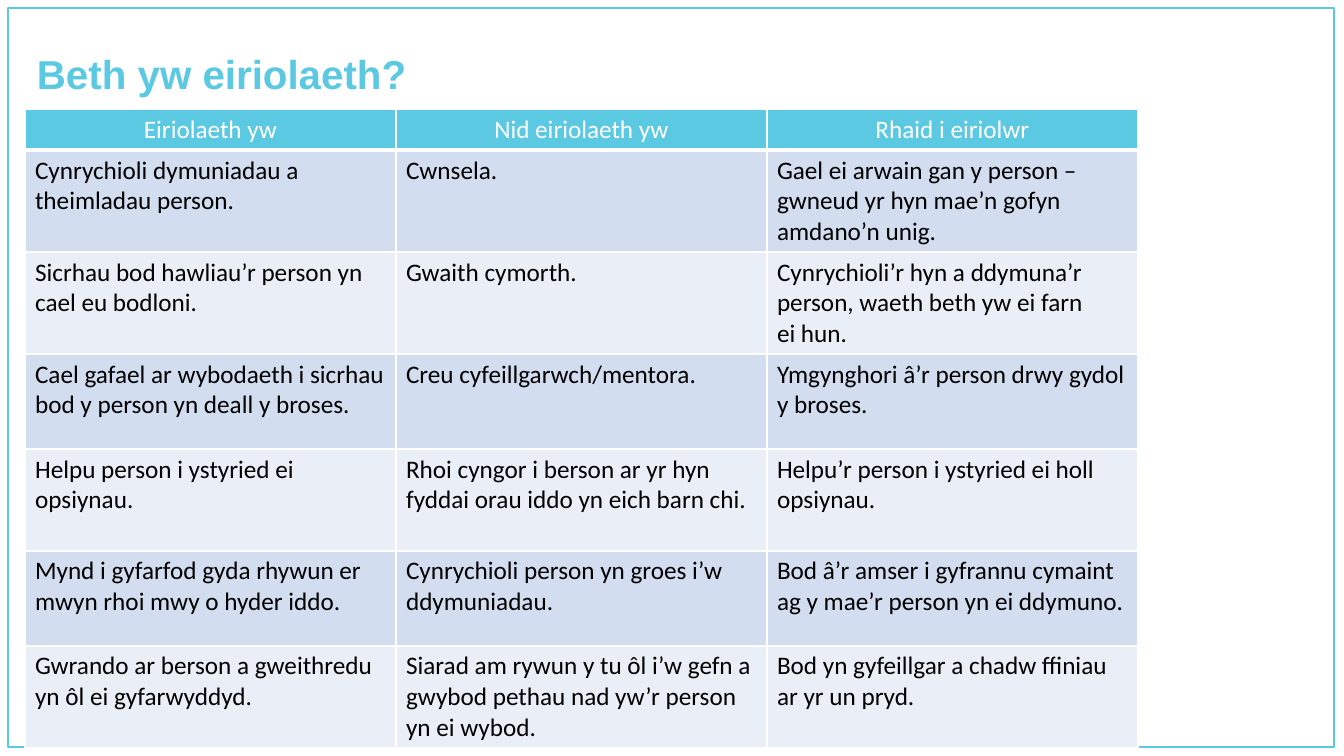
from dataclasses import dataclass

from lxml.etree import SubElement
from pptx import Presentation
from pptx.dml.color import RGBColor
from pptx.enum.shapes import MSO_SHAPE
from pptx.enum.text import MSO_ANCHOR, PP_ALIGN
from pptx.oxml.ns import qn
from pptx.util import Emu, Pt

TITLE = "Beth yw eiriolaeth?"
ROWS = [
    ("Eiriolaeth yw", "Nid eiriolaeth yw", "Rhaid i eiriolwr"),
    ("Cynrychioli dymuniadau a theimladau person.",
     "Cwnsela.",
     "Gael ei arwain gan y person – gwneud yr hyn mae’n gofyn amdano’n unig."),
    ("Sicrhau bod hawliau’r person yn cael eu bodloni.",
     "Gwaith cymorth.",
     "Cynrychioli’r hyn a ddymuna’r person, waeth beth yw ei farn \vei hun."),
    ("Cael gafael ar wybodaeth i sicrhau bod y person yn deall y broses.",
     "Creu cyfeillgarwch/mentora.",
     "Ymgynghori â’r person drwy gydol y broses."),
    ("Helpu person i ystyried ei opsiynau.",
     "Rhoi cyngor i berson ar yr hyn fyddai orau iddo yn eich barn chi.",
     "Helpu’r person i ystyried ei holl opsiynau."),
    ("Mynd i gyfarfod gyda rhywun er mwyn rhoi mwy o hyder iddo.",
     "Cynrychioli person yn groes i’w ddymuniadau.",
     "Bod â’r amser i gyfrannu cymaint ag y mae’r person yn ei ddymuno."),
    ("Gwrando ar berson a gweithredu yn ôl ei gyfarwyddyd.",
     "Siarad am rywun y tu ôl i’w gefn a gwybod pethau nad yw’r person yn ei wybod.",
     "Bod yn gyfeillgar a chadw ffiniau ar yr un pryd."),
]
SLIDE = (1344, 756)
FRAME = (8, 8, 1326, 739)
TITLE_BOX = (27, 49, 1056, 54)
TABLE_AT = (25, 109)
COLUMN = 371
ROW_HEIGHTS = (41, 102, 102, 95, 102, 95, 102)


@dataclass(frozen=True)
class Theme:
    accent: str = "5CC9E3"
    white: str = "FFFFFF"
    text: str = "000000"
    bands: tuple = ("D2DEEF", "EAEFF7")
    title_font: str = "Arial"
    body_font: str = "Calibri"
    title_size: float = 28.8
    body_size: int = 18
    rule: int = 1
    header_rule: int = 3


THEME = Theme()


def px(n):
    return Emu(round(n * 12192000 / SLIDE[0]))


def rgb(value):
    return RGBColor.from_string(value)


def style_font(font, name, size, color, bold):
    font.name, font.size, font.bold = name, Pt(size), bold
    font.color.rgb = rgb(color)


def add_frame(slide):
    sp = slide.shapes.add_shape(MSO_SHAPE.RECTANGLE, *map(px, FRAME))
    sp.shadow.inherit = False
    sp.fill.background()
    sp.line.color.rgb = rgb(THEME.accent)
    sp.line.width = Pt(THEME.rule)


def add_title(slide):
    tf = slide.shapes.add_textbox(*map(px, TITLE_BOX)).text_frame
    tf.word_wrap = True
    tf.vertical_anchor = MSO_ANCHOR.BOTTOM
    tf.text = TITLE
    p = tf.paragraphs[0]
    p.line_spacing = 0.9
    style_font(p.runs[0].font, THEME.title_font, THEME.title_size, THEME.accent, True)


def add_borders(cell, bottom):
    tc_pr = cell._tc.get_or_add_tcPr()
    widths = {"lnL": THEME.rule, "lnR": THEME.rule, "lnT": THEME.rule, "lnB": bottom}
    for side, width in widths.items():
        ln = SubElement(tc_pr, qn(f"a:{side}"), w=str(Pt(width)))
        fill = SubElement(ln, qn("a:solidFill"))
        SubElement(fill, qn("a:srgbClr"), val=THEME.white)


def fill_cell(cell, text, row):
    header = row == 0
    add_borders(cell, THEME.header_rule if header else THEME.rule)
    cell.fill.solid()
    cell.fill.fore_color.rgb = rgb(THEME.accent if header else THEME.bands[(row - 1) % 2])
    cell.text_frame.text = text
    p = cell.text_frame.paragraphs[0]
    p.alignment = PP_ALIGN.CENTER if header else PP_ALIGN.LEFT
    for r in p.runs:
        style_font(r.font, THEME.body_font, THEME.body_size,
                   THEME.white if header else THEME.text, False)


def add_advocacy_table(slide):
    columns = len(ROWS[0])
    table = slide.shapes.add_table(
        len(ROWS), columns, *map(px, TABLE_AT),
        px(COLUMN * columns), px(sum(ROW_HEIGHTS))).table
    table.first_row = table.horz_banding = False
    for column in table.columns:
        column.width = px(COLUMN)
    for i, (texts, height) in enumerate(zip(ROWS, ROW_HEIGHTS)):
        table.rows[i].height = px(height)
        for j, text in enumerate(texts):
            fill_cell(table.cell(i, j), text, i)


def main():
    prs = Presentation()
    prs.slide_width, prs.slide_height = map(px, SLIDE)
    s = prs.slides.add_slide(prs.slide_layouts[6])
    add_frame(s)
    add_title(s)
    add_advocacy_table(s)
    prs.save("out.pptx")


if __name__ == "__main__":
    main()
